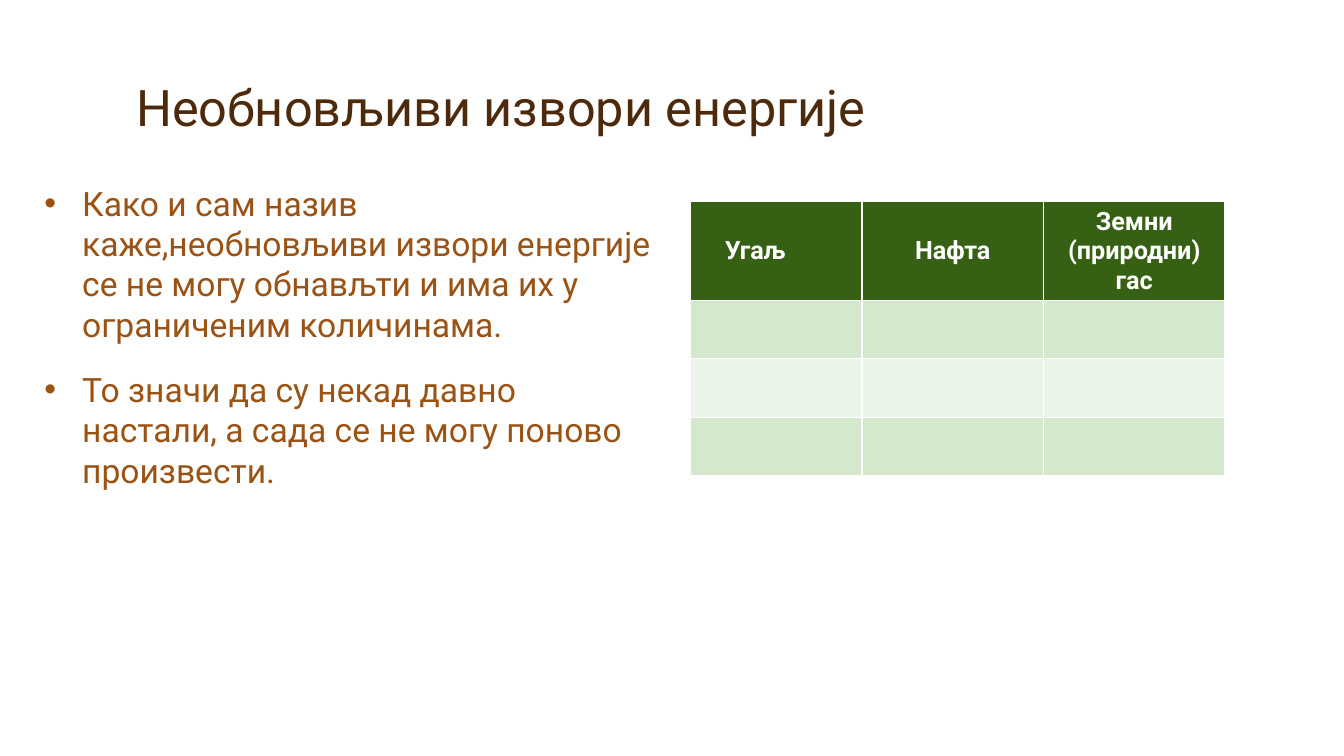
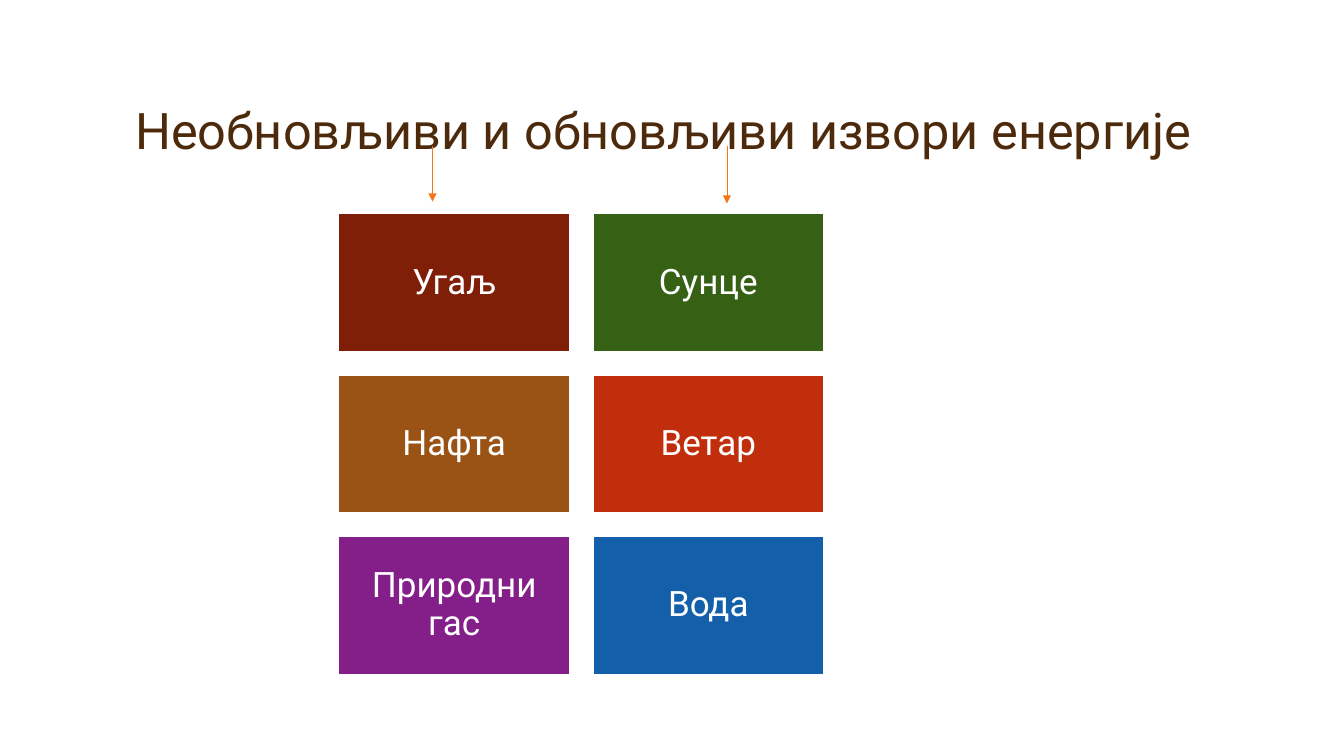
from dataclasses import dataclass

from lxml import etree
from pptx import Presentation
from pptx.dml.color import RGBColor
from pptx.enum import shapes, text
from pptx.oxml import ns
from pptx.util import Inches, Pt


@dataclass(frozen=True)
class Theme:
    font: str = "Roboto"
    title_size: int = 36
    body_size: int = 24
    box_size: int = 25
    table_size: int = 18
    title: str = "4D2A0B"
    brown: str = "9A5315"
    green: str = "366013"
    maroon: str = "801F08"
    red: str = "C02E0C"
    purple: str = "841E89"
    blue: str = "145FAA"
    orange: str = "F3771A"
    band_dark: str = "D4E8CD"
    band_light: str = "EBF4E8"
    white: str = "FFFFFF"


theme = Theme()


def style_text(text_frame, size, color, align, bold=False):
    for paragraph in text_frame.paragraphs:
        paragraph.alignment = align
        for run in paragraph.runs:
            run.font.name = theme.font
            run.font.size = Pt(size)
            run.font.bold = bold
            run.font.color.rgb = RGBColor.from_string(color)


def add_titled_slide(layout_index, title, left, top, width):
    slide = presentation.slides.add_slide(presentation.slide_layouts[layout_index])
    shape = slide.shapes.title
    shape.left, shape.top = Inches(left), Inches(top)
    shape.width, shape.height = Inches(width), Inches(1.33)
    frame = shape.text_frame
    frame.text = title
    frame.auto_size = text.MSO_AUTO_SIZE.NONE
    frame.vertical_anchor = text.MSO_ANCHOR.BOTTOM
    frame.paragraphs[0].line_spacing = 0.9
    style_text(frame, theme.title_size, theme.title, text.PP_ALIGN.LEFT)
    return slide


presentation = Presentation()
presentation.slide_width, presentation.slide_height = Inches(13.33), Inches(7.5)

# Slide 1: definition and table
slide = add_titled_slide(1, "Необновљиви извори енергије", 1.25, 0.08, 11)

body = slide.placeholders[1]
body.left, body.top = Inches(0.34), Inches(1.76)
body.width, body.height = Inches(6.24), Inches(4.58)
frame = body.text_frame
frame.text = (
    "Како и сам назив каже,необновљиви извори енергије се не могу обнављти "
    "и има их у ограниченим количинама.\n"
    "То значи да су некад давно настали, а сада се не могу поново произвести."
)
frame.auto_size = text.MSO_AUTO_SIZE.NONE
style_text(frame, theme.body_size, theme.brown, text.PP_ALIGN.LEFT)
for paragraph, space in zip(frame.paragraphs, (0, 18)):
    paragraph.space_before = Pt(space)

headers = ["Угаљ", "Нафта", "Земни\n(природни) гас"]
row_fills = [theme.green, theme.band_dark, theme.band_light, theme.band_dark]
row_heights = [0.97, 0.58, 0.58, 0.58]
column_widths = [1.7, 1.8, 1.8]
table = slide.shapes.add_table(
    len(row_fills), len(headers), Inches(6.85), Inches(2),
    Inches(sum(column_widths)), Inches(sum(row_heights)),
).table
for column, width in zip(table.columns, column_widths):
    column.width = Inches(width)
for row, height, fill in zip(table.rows, row_heights, row_fills):
    row.height = Inches(height)
    for cell in row.cells:
        cell.fill.solid()
        cell.fill.fore_color.rgb = RGBColor.from_string(fill)
for cell, header in zip(table.rows[0].cells, headers):
    cell.text_frame.text = header
    cell.vertical_anchor = text.MSO_ANCHOR.MIDDLE
    style_text(cell.text_frame, theme.table_size, theme.white, text.PP_ALIGN.CENTER, bold=True)
coal_cell = table.cell(0, 0)
coal_cell.margin_left = Inches(0.34)
coal_cell.text_frame.paragraphs[0].alignment = text.PP_ALIGN.LEFT

# Slide 2: grid of sources, one column per kind
slide = add_titled_slide(5, "Необновљиви и обновљиви извори енергије", 1.24, 0.31, 11.53)

sources = [
    [("Угаљ", theme.maroon), ("Сунце", theme.green)],
    [("Нафта", theme.brown), ("Ветар", theme.red)],
    [("Природни гас", theme.purple), ("Вода", theme.blue)],
]
box_width, box_height, gap = 2.29, 1.37, 0.23
for row_index, row in enumerate(sources):
    for column_index, (label, color) in enumerate(row):
        box = slide.shapes.add_shape(
            shapes.MSO_SHAPE.RECTANGLE,
            Inches(3.36 + column_index * (box_width + gap)),
            Inches(2.12 + row_index * (box_height + gap)),
            Inches(box_width), Inches(box_height),
        )
        box.shadow.inherit = False
        box.fill.solid()
        box.fill.fore_color.rgb = RGBColor.from_string(color)
        box.line.color.rgb = RGBColor.from_string(theme.white)
        box.line.width = Pt(1)
        frame = box.text_frame
        frame.text = label
        frame.word_wrap = True
        frame.vertical_anchor = text.MSO_ANCHOR.MIDDLE
        frame.margin_left = frame.margin_right = Inches(0.1)
        frame.margin_top = frame.margin_bottom = Inches(0.1)
        frame.paragraphs[0].line_spacing = 0.9
        style_text(frame, theme.box_size, theme.white, text.PP_ALIGN.CENTER)

for x, end_y in ((4.29, 2), (7.21, 2.02)):
    arrow = slide.shapes.add_connector(
        shapes.MSO_CONNECTOR.STRAIGHT, Inches(x), Inches(1.45), Inches(x), Inches(end_y)
    )
    arrow.line.color.rgb = RGBColor.from_string(theme.orange)
    arrow.line.width = Pt(0.5)
    etree.SubElement(arrow.line._get_or_add_ln(), ns.qn("a:tailEnd"), type="triangle")
    etree.SubElement(arrow._element.spPr, ns.qn("a:effectLst"))

presentation.save("out.pptx")
